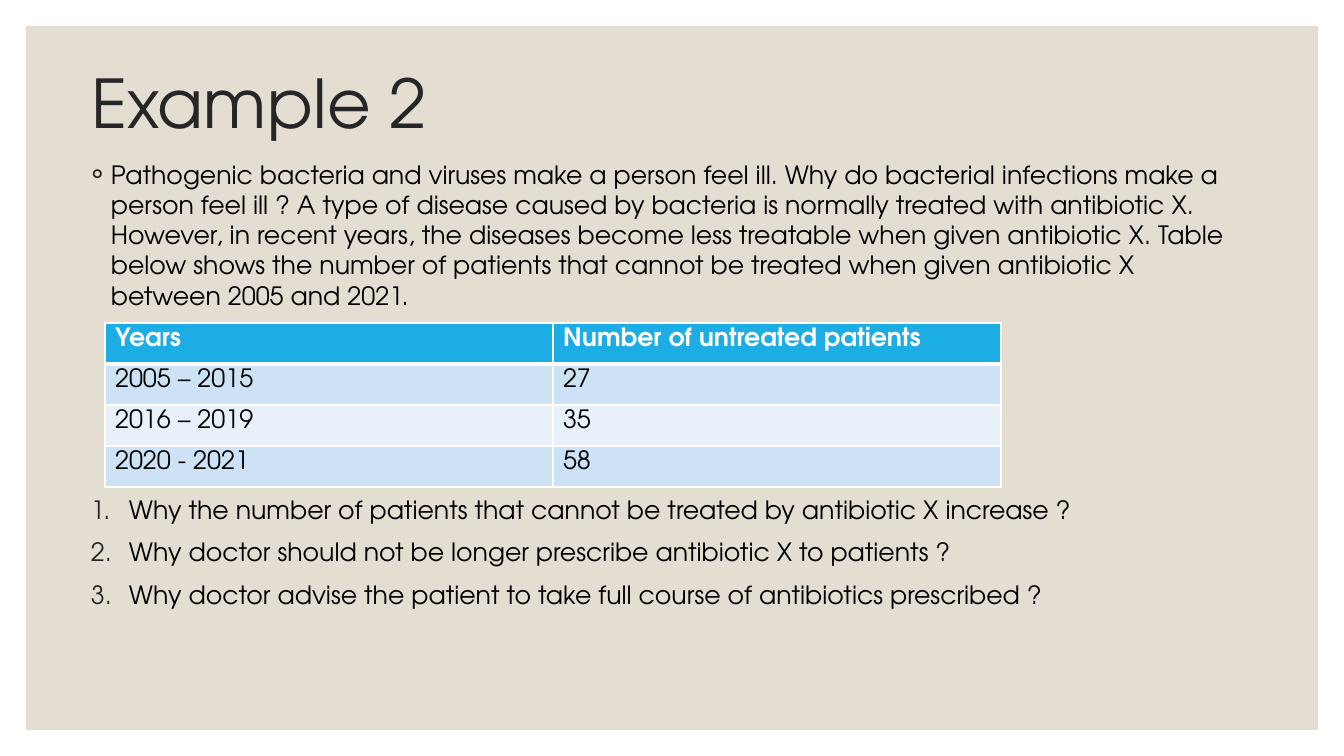
from lxml.etree import SubElement as Sub
from pptx import Presentation
from pptx.dml.color import RGBColor as Rgb
from pptx.enum.shapes import MSO_SHAPE as Geo
from pptx.enum.text import MSO_ANCHOR as Anchor, PP_ALIGN as Align
from pptx.oxml.ns import qn
from pptx.util import Pt

SCALE = 914400 / 100.8  # EMU in one px
FONT = "TeX Gyre Adventor"
HUES = {
    "paper": "E3DED1", "title": "262626", "text": "000000", "line": "FFFFFF",
    "head": "1CADE4", "odd": "CDE3F5", "even": "E8F1FA",
}

TITLE = "Example 2"
INTRO = (
    "Pathogenic bacteria and viruses make a person feel ill. "
    "Why do bacterial infections make a person feel ill ? "
    "A type of disease caused by bacteria is normally treated with antibiotic X. "
    "However, in recent years, the diseases become less treatable when given "
    "antibiotic X. Table below shows the number of patients that cannot be "
    "treated when given antibiotic X between 2005 and 2021."
)
ASKS = [
    "Why the number of patients that cannot be treated by antibiotic X increase ?",
    "Why doctor should not be longer prescribe antibiotic X to patients ?",
    "Why doctor advise the patient to take full course of antibiotics prescribed ?",
]
ROWS = [
    ("Years", "Number of untreated patients"),
    ("2005 – 2015", "27"),
    ("2016 – 2019", "35"),
    ("2020 - 2021", "58"),
]


def px(num):
    return round(num * SCALE)


def box(*nums):
    return [px(num) for num in nums]


def hue(name):
    return Rgb.from_string(HUES[name])


def style(para, size, name, bold=False):
    for run in para.runs:
        font = run.font
        font.name, font.size, font.bold = FONT, Pt(size), bold
        font.color.rgb = hue(name)


def panel(slide):
    rect = slide.shapes.add_shape(Geo.RECTANGLE, *box(26, 26, 1292, 704))
    rect.shadow.inherit = False
    rect.fill.solid()
    rect.fill.fore_color.rgb = hue("paper")
    rect.line.fill.background()


def head(slide, text):
    shape = slide.shapes.title
    shape.left, shape.top, shape.width, shape.height = box(81, 31, 1109, 151)
    frame = shape.text_frame
    frame.text = text
    frame.word_wrap = True
    frame.vertical_anchor = Anchor.MIDDLE
    para = frame.paragraphs[0]
    para.alignment = Align.LEFT
    para.line_spacing = 0.9
    style(para, 48, "title")
    # Bring the title in front of the panel
    slide.shapes._spTree.append(shape._element)


def mark(para, indent, tag, **attrs):
    prop = para._p.get_or_add_pPr()
    prop.set("marL", str(px(indent)))
    prop.set("indent", str(-px(indent)))
    tint = Sub(prop, qn("a:buClr"))
    Sub(tint, qn("a:srgbClr"), val=HUES["title"])
    Sub(prop, qn("a:buFont"), typeface=FONT)
    Sub(prop, qn(tag), **attrs)


def items(slide, place, texts, indent, tag, **attrs):
    frame = slide.shapes.add_textbox(*box(*place)).text_frame
    frame.word_wrap = True
    frame.text = "\n".join(texts)
    for num, para in enumerate(frame.paragraphs):
        para.space_before = Pt(9 if num else 0)
        style(para, 18, "text")
        mark(para, indent, tag, **attrs)


def edge(cell, side, width):
    line = Sub(cell._tc.get_or_add_tcPr(), qn("a:ln" + side), w=str(Pt(width)))
    fill = Sub(line, qn("a:solidFill"))
    Sub(fill, qn("a:srgbClr"), val=HUES["line"])


def grid(slide, rows):
    size = len(rows), len(rows[0])
    table = slide.shapes.add_table(*size, *box(105, 323, 896, 164)).table
    for y, row in enumerate(rows):
        for x, text in enumerate(row):
            cell = table.cell(y, x)
            cell.text = text
            style(cell.text_frame.paragraphs[0], 18,
                  "text" if y else "line", bold=not y)
            # A thick rule parts the header from the data
            widths = {"L": 1, "R": 1, "T": 3 if y == 1 else 1, "B": 1 if y else 3}
            for side, width in widths.items():
                edge(cell, side, width)
            cell.fill.solid()
            band = "odd" if y % 2 else "even"
            cell.fill.fore_color.rgb = hue(band if y else "head")


def main():
    deck = Presentation()
    deck.slide_width, deck.slide_height = box(1344, 756)
    slide = deck.slides.add_slide(deck.slide_layouts[5])

    # Backdrop and title
    panel(slide)
    head(slide, TITLE)

    # Intro, data and questions
    items(slide, (81, 154, 1158, 162), [INTRO], 20, "a:buChar", char="◦")
    grid(slide, ROWS)
    items(slide, (81, 489, 1158, 130), ASKS, 38,
          "a:buAutoNum", type="arabicPeriod")

    deck.save("out.pptx")


if __name__ == "__main__":
    main()
